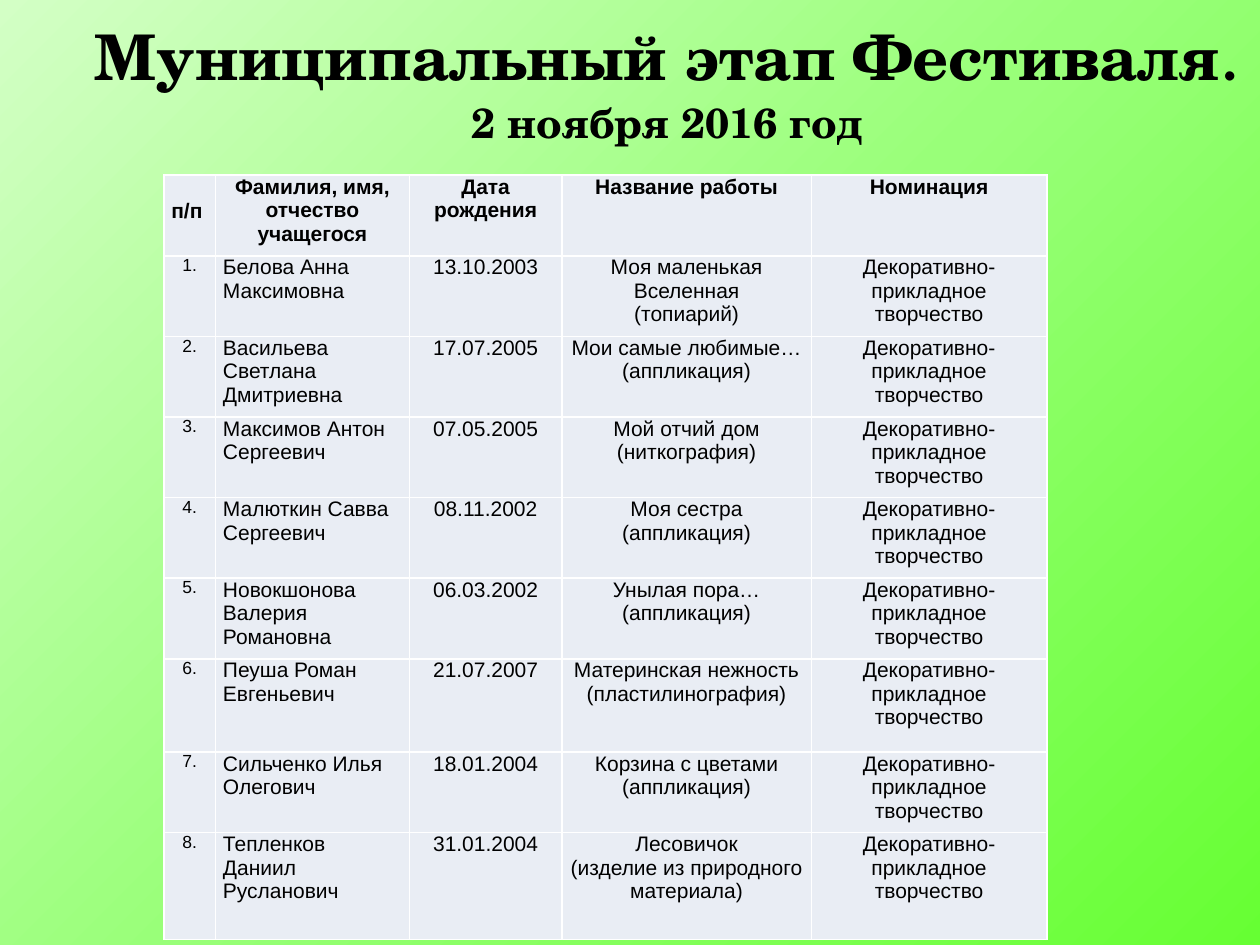
from copy import deepcopy
from dataclasses import dataclass

from pptx import Presentation
from pptx.dml.color import RGBColor
from pptx.enum.text import MSO_ANCHOR, PP_ALIGN
from pptx.oxml import parse_xml
from pptx.oxml.ns import nsdecls, qn
from pptx.util import Inches, Pt

COLORS = {
    "ink": "000000",
    "cell": "E9EDF4",
    "border": "FFFFFF",
    "light": "D3FFC5",
    "middle": "99FF79",
    "vivid": "66FF33",
}

# The page is a grid of 100 columns by 75 rows of square units.
UNIT = Inches(0.1)
PAGE_COLUMNS, PAGE_ROWS = 100, 75

COLUMN_UNITS = [4.1, 15.4, 12.1, 19.8, 18.7]
ROW_UNITS = [6.4] * 6 + [7.4, 6.4, 8.5]
HEADERS = ["п/п", "Фамилия, имя, отчество учащегося", "Дата\nрождения",
           "Название работы", "Номинация"]
NOMINATION = "Декоративно-прикладное творчество"


@dataclass(frozen=True)
class Entry:
    pupil: str
    born: str
    work: str
    technique: str


@dataclass(frozen=True)
class Style:
    size: float
    font: str = "Arial"
    bold: bool = False
    align: PP_ALIGN = PP_ALIGN.CENTER


ENTRIES = [
    Entry("Белова Анна Максимовна", "13.10.2003", "Моя маленькая Вселенная", "(топиарий)"),
    Entry("Васильева Светлана Дмитриевна", "17.07.2005", "Мои самые любимые…", "(аппликация)"),
    Entry("Максимов Антон Сергеевич", "07.05.2005", "Мой отчий дом", "(ниткография)"),
    Entry("Малюткин Савва Сергеевич", "08.11.2002", "Моя сестра", "(аппликация)"),
    Entry("Новокшонова Валерия Романовна", "06.03.2002", "Унылая пора…", "(аппликация)"),
    Entry("Пеуша Роман Евгеньевич", "21.07.2007", "Материнская нежность", "(пластилинография)"),
    Entry("Сильченко Илья Олегович", "18.01.2004", "Корзина с цветами", "(аппликация)"),
    Entry("Тепленков Даниил Русланович", "31.01.2004", "Лесовичок",
          "(изделие из природного материала)"),
]

HEADER = Style(12, bold=True)
HEADER_LEFT = Style(12, bold=True, align=PP_ALIGN.LEFT)
NUMBER = Style(10)
NAME = Style(12, align=PP_ALIGN.LEFT)
BODY = Style(12)
HEADER_STYLES = [HEADER_LEFT] + [HEADER] * 4
BODY_STYLES = [NUMBER, NAME, BODY, BODY, BODY]

TITLE = Style(36, "TeX Gyre Schola", True)
TITLE_STOP = Style(44, "Calibri")
SUBTITLE = Style(24, "TeX Gyre Schola", True)


def units(count: float) -> int:
    return round(count * UNIT)


def set_attributes(target, values: dict) -> None:
    for name, value in values.items():
        setattr(target, name, value)


def add_span(para, text: str, style: Style) -> None:
    span = para.add_run()
    span.text = text
    set_attributes(span.font, {"size": Pt(style.size), "name": style.font, "bold": style.bold})
    span.font.color.rgb = RGBColor.from_string(COLORS["ink"])


def paint_background(page) -> None:
    fill = page.background.fill
    fill.gradient()
    fill.gradient_angle = 315
    stop_list = page._element.find(".//" + qn("a:gsLst"))
    stop_list.append(deepcopy(stop_list[-1]))
    for stop, (place, color) in zip(
            fill.gradient_stops, [(0, "light"), (0.5, "middle"), (1, "vivid")]):
        stop.position = place
        stop.color.rgb = RGBColor.from_string(COLORS[color])


def add_title(page) -> None:
    box = page.shapes.add_textbox(units(5.9), units(3), units(94.1), units(12.5))
    # The deep bottom margin lifts the centred text towards the top edge.
    set_attributes(box.text_frame, {
        "word_wrap": True, "vertical_anchor": MSO_ANCHOR.MIDDLE,
        "margin_top": 0, "margin_bottom": units(6.6),
    })
    para = box.text_frame.paragraphs[0]
    para.alignment = PP_ALIGN.CENTER
    add_span(para, "Муниципальный этап Фестиваля", TITLE)
    add_span(para, ".", TITLE_STOP)
    para.add_line_break()
    add_span(para, "2 ноября 2016 год", SUBTITLE)


def add_borders(cell) -> None:
    properties = cell._tc.get_or_add_tcPr()
    for index, side in enumerate(("lnL", "lnR", "lnT", "lnB")):
        properties.insert(index, parse_xml(
            f'<a:{side} {nsdecls("a")} w="{Pt(1)}"><a:solidFill>'
            f'<a:srgbClr val="{COLORS["border"]}"/></a:solidFill></a:{side}>'))


def fill_cell(cell, text: str, style: Style) -> None:
    set_attributes(cell, {"margin_left": units(0.6), "margin_right": units(0.6),
                          "margin_top": 0, "margin_bottom": 0})
    cell.fill.solid()
    cell.fill.fore_color.rgb = RGBColor.from_string(COLORS["cell"])
    add_borders(cell)
    for index, line in enumerate(text.split("\n")):
        frame = cell.text_frame
        para = frame.add_paragraph() if index else frame.paragraphs[0]
        para.alignment = style.align
        add_span(para, line, style)


def add_entries_table(page) -> None:
    rows = [HEADERS] + [
        [f"{number}.", entry.pupil, entry.born, f"{entry.work}\n{entry.technique}", NOMINATION]
        for number, entry in enumerate(ENTRIES, 1)
    ]
    table = page.shapes.add_table(
        len(rows), len(HEADERS), units(13), units(13.9),
        units(sum(COLUMN_UNITS)), units(sum(ROW_UNITS))).table
    set_attributes(table, {"first_row": False, "horz_banding": False})
    for column, width in zip(table.columns, COLUMN_UNITS):
        column.width = units(width)
    for row_index, (texts, height) in enumerate(zip(rows, ROW_UNITS)):
        table.rows[row_index].height = units(height)
        styles = BODY_STYLES if row_index else HEADER_STYLES
        for column_index, (text, style) in enumerate(zip(texts, styles)):
            fill_cell(table.cell(row_index, column_index), text, style)
    # The first heading stands level with the second line of its neighbours.
    table.cell(0, 0).margin_top = units(1.9)


def main() -> None:
    deck = Presentation()
    set_attributes(deck, {"slide_width": units(PAGE_COLUMNS), "slide_height": units(PAGE_ROWS)})
    page = deck.slides.add_slide(deck.slide_layouts[6])
    paint_background(page)
    add_title(page)
    add_entries_table(page)
    deck.save("out.pptx")


if __name__ == "__main__":
    main()
